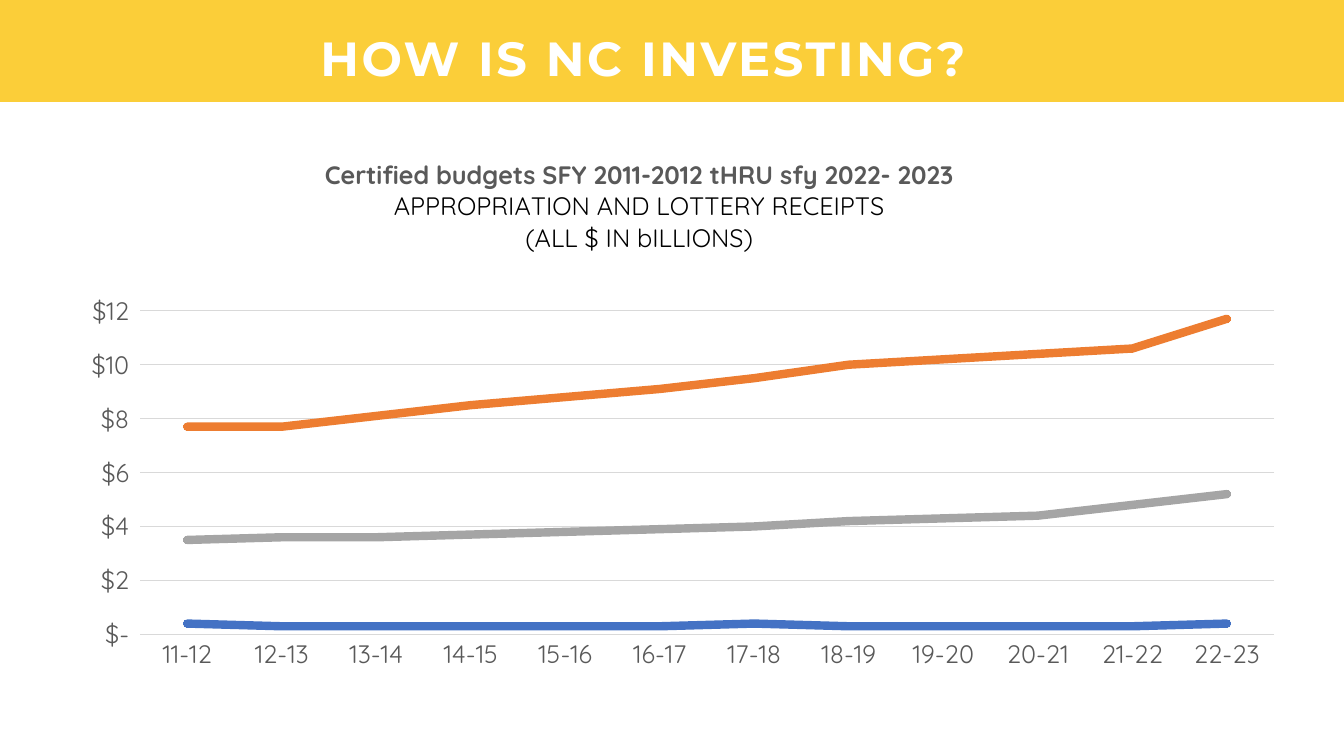
from lxml.etree import SubElement
from pptx import Presentation
from pptx.chart.data import CategoryChartData
from pptx.dml.color import RGBColor
from pptx.enum.chart import XL_CHART_TYPE, XL_MARKER_STYLE, XL_TICK_MARK
from pptx.enum.shapes import MSO_SHAPE
from pptx.enum.text import MSO_AUTO_SIZE, PP_ALIGN
from pptx.oxml.ns import qn
from pptx.util import Pt

YELLOW, WHITE, BLACK = "FBCE39", "FFFFFF", "000000"
TEXT_GREY, RULE_GREY = "595959", "D9D9D9"
HEADING_FONT, CHART_FONT = "Montserrat", "Quicksand"

YEARS = [f"{year}-{year + 1}" for year in range(11, 23)]
# Line colour and billions of dollars per year
FUNDING = [
    ("4472C4", [0.4, 0.3, 0.3, 0.3, 0.3, 0.3, 0.4, 0.3, 0.3, 0.3, 0.3, 0.4]),
    ("ED7D31", [7.7, 7.7, 8.1, 8.5, 8.8, 9.1, 9.5, 10, 10.2, 10.4, 10.6, 11.7]),
    ("A5A5A5", [3.5, 3.6, 3.6, 3.7, 3.8, 3.9, 4, 4.2, 4.3, 4.4, 4.8, 5.2]),
]
CAPTION = [
    ("Certified budgets SFY 2011-2012 tHRU sfy 2022- 2023", True, TEXT_GREY),
    ("APPROPRIATION AND LOTTERY RECEIPTS", False, BLACK),
    ("(ALL $ IN bILLIONS)", False, BLACK),
]


def rgb(code):
    return RGBColor.from_string(code)


def style_font(font, name, size, color, bold=False):
    font.name = name
    font.size = Pt(size)
    font.bold = bold
    font.color.rgb = rgb(color)


def style_line(line, color, width):
    line.color.rgb = rgb(color)
    line.width = Pt(width)


def place(parent, index, **settings):
    """Give a chart part a manual layout, in fractions of the chart."""
    for old_layout in parent.findall(qn("c:layout")):
        parent.remove(old_layout)
    layout = SubElement(parent, qn("c:layout"))
    parent.insert(index, layout)
    manual = SubElement(layout, qn("c:manualLayout"))
    for key, value in settings.items():
        SubElement(manual, qn(f"c:{key}")).set("val", str(value))


def add_band(slide):
    band = slide.shapes.add_shape(MSO_SHAPE.RECTANGLE, Pt(-6), Pt(0), Pt(970), Pt(72.7))
    band.shadow.inherit = False
    band.fill.solid()
    band.fill.fore_color.rgb = rgb(YELLOW)
    band.line.fill.background()


def add_heading(slide, text):
    heading = slide.shapes.add_textbox(Pt(38.2), Pt(25.9), Pt(842.4), Pt(36))
    frame = heading.text_frame
    frame.word_wrap = True
    frame.auto_size = MSO_AUTO_SIZE.SHAPE_TO_FIT_TEXT
    frame.margin_left = frame.margin_right = frame.margin_top = frame.margin_bottom = 0
    frame.text = text
    paragraph = frame.paragraphs[0]
    paragraph.alignment = PP_ALIGN.CENTER
    paragraph.line_spacing = Pt(35.9)
    run = paragraph.runs[0]
    style_font(run.font, HEADING_FONT, 34.2, WHITE, bold=True)
    run.font._element.set("spc", "190")


def add_caption(chart):
    chart.has_title = True
    title = chart.chart_title
    title.include_in_layout = False
    frame = title.text_frame
    frame.text = "\n".join(text for text, _, _ in CAPTION)
    for paragraph, (_, bold, color) in zip(frame.paragraphs, CAPTION):
        paragraph.alignment = PP_ALIGN.CENTER
        style_font(paragraph.runs[0].font, CHART_FONT, 18, color, bold)
    place(title._element, 1, xMode="edge", yMode="edge", x=0.217, y=0.005)


def style_axes(chart):
    years, dollars = chart.category_axis, chart.value_axis
    for axis in (years, dollars):
        axis.major_tick_mark = axis.minor_tick_mark = XL_TICK_MARK.NONE
        style_font(axis.tick_labels.font, CHART_FONT, 18, TEXT_GREY)
    style_line(years.format.line, RULE_GREY, 0.75)
    dollars.format.line.fill.background()
    dollars.minimum_scale, dollars.maximum_scale, dollars.major_unit = 0, 12, 2
    dollars.has_major_gridlines = True
    style_line(dollars.major_gridlines.format.line, RULE_GREY, 0.75)
    dollars.tick_labels.number_format = '"$"#,##0_);"$"(#,##0);"$-"_)'
    dollars.tick_labels.number_format_is_linked = False


def style_series(series, color):
    series.smooth = False
    style_line(series.format.line, color, 6)
    series._element.find(qn("c:spPr")).find(qn("a:ln")).set("cap", "rnd")
    marker = series.marker
    marker.style = XL_MARKER_STYLE.CIRCLE
    marker.size = 5
    marker.format.fill.solid()
    marker.format.fill.fore_color.rgb = rgb(color)
    style_line(marker.format.line, color, 0.75)


def add_budget_chart(slide):
    budgets = CategoryChartData()
    budgets.categories = YEARS
    for _, billions in FUNDING:
        budgets.add_series("", billions)
    chart = slide.shapes.add_chart(XL_CHART_TYPE.LINE_MARKERS, Pt(38.2), Pt(108),
                                   Pt(883.4), Pt(386.6), budgets).chart
    style_font(chart.font, CHART_FONT, 10, BLACK)
    chart.has_legend = False
    chart.plots[0].vary_by_categories = False
    add_caption(chart)
    style_axes(chart)
    for series, (color, _) in zip(chart.plots[0].series, FUNDING):
        style_series(series, color)
    plot_area = chart._chartSpace.find(qn("c:chart")).find(qn("c:plotArea"))
    place(plot_area, 0, layoutTarget="inner", xMode="edge", yMode="edge",
          x=0.07, y=0.295, w=0.917, h=0.598)


def main():
    deck = Presentation()
    deck.slide_width, deck.slide_height = Pt(960), Pt(540)
    slide = deck.slides.add_slide(deck.slide_layouts[6])

    # Header
    add_band(slide)
    add_heading(slide, "HOW IS NC INVESTING?")

    # Budgets by school year
    add_budget_chart(slide)

    deck.save("out.pptx")


if __name__ == "__main__":
    main()
